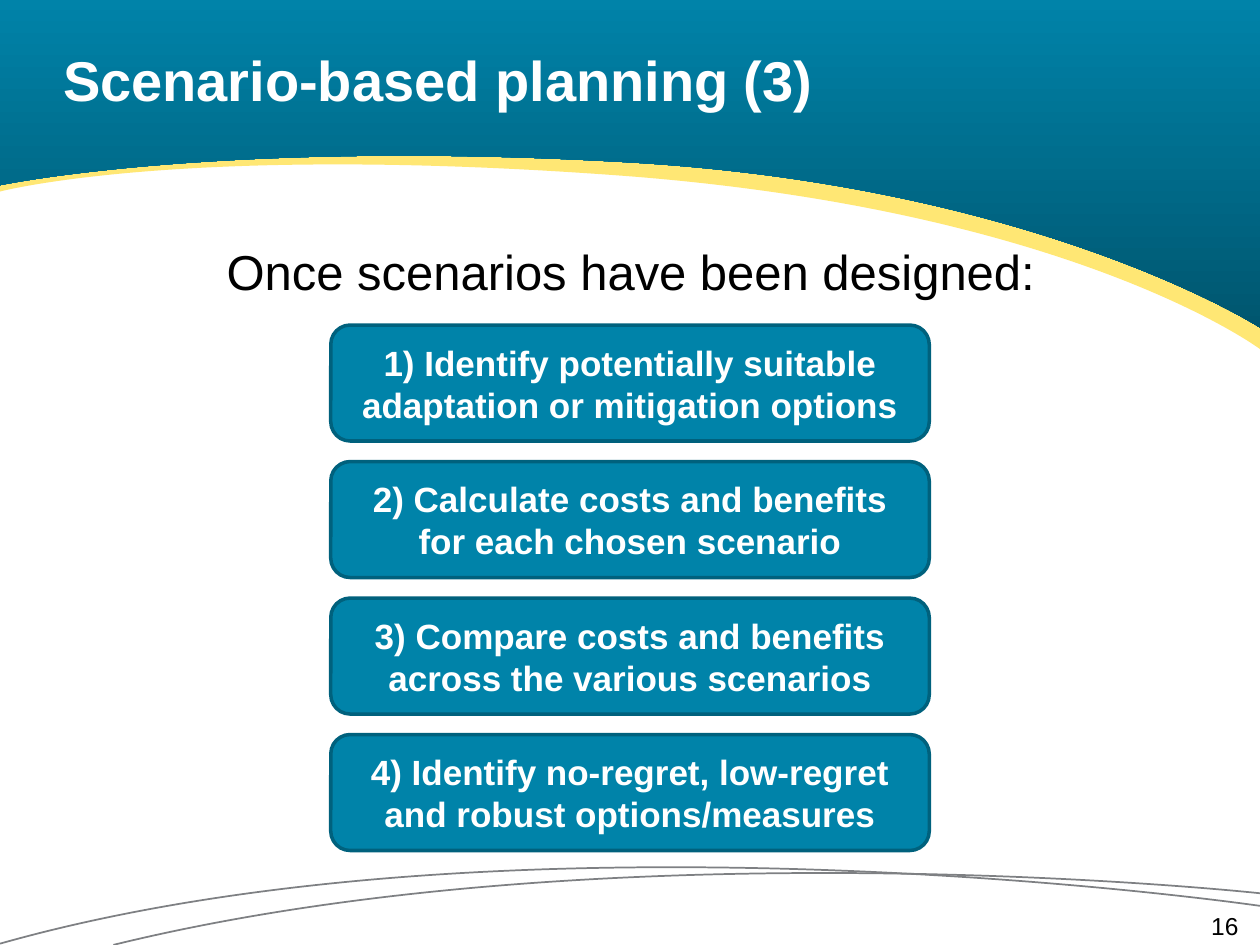
from pptx import Presentation, util as u
from pptx.dml.color import RGBColor
from pptx.enum import shapes as sh, text as tx
from pptx.oxml.ns import qn
from lxml import etree

# Content
TITLE = "Scenario-based planning (3)"
LEAD = "Once scenarios have been designed:"
STEPS = [
    "1) Identify potentially suitable adaptation or mitigation options",
    "2) Calculate costs and benefits for each chosen scenario",
    "3) Compare costs and benefits across the various scenarios",
    "4) Identify no-regret, low-regret and robust options/measures",
]
PAGE = "16"

# Curves: start point, then cubic segments (two controls and an end)
ARCS = [
    ((10, 7.09), [((10, 7.09), (4.85, 6.53), (0.9, 7.5))]),
    ((10, 7.19), [((10, 7.19), (4.1, 6.33), (0, 7.49))]),
]
GOLD = ((10, 2.77), [((10, 2.77), (8.54, 1.68), (5.01, 1.4)),
                     ((1.47, 1.13), (0, 1.52), (0, 1.52))])
TEAL = ((10, 2.6), [((10, 2.6), (8.26, 1.48), (5.01, 1.29)),
                    ((1.75, 1.1), (0, 1.47), (0, 1.47))])
TOP = [(0, -0.01), (10, -0.01)]

W, H = 10, 7.5
FONT = "Arial"
BOX_W, BOX_H, BOX_TOP = 0.475 * W, 0.92, 2.58
PITCH = (5.83 - BOX_TOP) / (len(STEPS) - 1)


def color(hexa):
    return RGBColor.from_string(hexa)


def place(shape, x, y, w, h):
    shape.left, shape.top, shape.width, shape.height = map(u.Inches, (x, y, w, h))


def write(shape, words, size, hue, bold=False, align=tx.PP_ALIGN.LEFT,
          anchor=tx.MSO_ANCHOR.TOP, inset=0):
    frame = shape.text_frame
    frame.word_wrap = True
    frame.auto_size = tx.MSO_AUTO_SIZE.NONE
    frame.vertical_anchor = anchor
    frame.margin_left = frame.margin_right = u.Inches(inset)
    frame.margin_top = frame.margin_bottom = u.Inches(inset / 2)
    para = frame.paragraphs[0]
    para.alignment = align
    run = para.add_run()
    run.text = words
    font = run.font
    font.name, font.size, font.bold = FONT, u.Pt(size), bold
    font.color.rgb = color(hue)
    return para


def draw(slide, start, segs, corners=()):
    """Open arc, or a closed band when corners are given."""
    pts = [start, *(p for seg in segs for p in seg), *corners]
    xs, ys = zip(*pts)
    x, y, right, low = min(xs), min(ys), max(xs), max(ys)

    # Outline of the bounding box, then its path turned into cubic curves
    frame = [(u.Inches(a), u.Inches(b))
             for a, b in ((x, y), (right, y), (right, low), (x, low))]
    pen = slide.shapes.build_freeform(*frame[0])
    pen.add_line_segments(frame[1:], close=bool(corners))
    shape = pen.convert_to_shape()
    path = next(shape.element.iter(qn("a:path")))
    for old in list(path):
        path.remove(old)
    moves = [("moveTo", [start])] + [("cubicBezTo", seg) for seg in segs]
    moves += [("lnTo", [p]) for p in corners]
    for tag, spots in moves:
        node = etree.SubElement(path, qn("a:" + tag))
        for a, b in spots:
            etree.SubElement(node, qn("a:pt"),
                             x=str(u.Inches(a - x)), y=str(u.Inches(b - y)))
    if corners:
        etree.SubElement(path, qn("a:close"))

    shape.shadow.inherit = False
    slide.shapes.title.element.addprevious(shape.element)
    return shape


def main():
    prs = Presentation()
    prs.slide_width, prs.slide_height = u.Inches(W), u.Inches(H)
    slide = prs.slides.add_slide(prs.slide_layouts[1])

    # Footer arcs
    for curve in ARCS:
        arc = draw(slide, *curve)
        arc.fill.background()
        arc.line.color.rgb = color("7E8083")
        arc.line.width = u.Pt(1)

    # Header bands
    gold = draw(slide, *GOLD, TOP)
    gold.fill.solid()
    gold.fill.fore_color.rgb = color("FFE774")
    gold.line.fill.background()
    teal = draw(slide, *TEAL, TOP)
    teal.fill.gradient()
    teal.fill.gradient_angle = 270
    for stop, pos, hue in zip(teal.fill.gradient_stops, (0, 1), ("0083A9", "00566F")):
        stop.position = pos
        stop.color.rgb = color(hue)
    teal.line.fill.background()

    # Title and lead line
    title, body = slide.shapes.title, slide.placeholders[1]
    place(title, 0.5, 0, 9.33, 1.25)
    write(title, TITLE, 32, "FFFFFF", True, anchor=tx.MSO_ANCHOR.MIDDLE)
    place(body, 0.34, 1.92, 9.33, 5.25)
    para = write(body, LEAD, 28, "000000", align=tx.PP_ALIGN.CENTER)
    props = para._p.get_or_add_pPr()
    props.set("marL", "0")
    props.set("indent", "0")
    etree.SubElement(props, qn("a:buNone"))

    # Page number
    page = slide.shapes.add_textbox(0, 0, 0, 0)
    place(page, 7.5, 7.23, 2.33, 0.18)
    write(page, PAGE, 14, "000000", align=tx.PP_ALIGN.RIGHT)

    # Step boxes
    for i, step in enumerate(STEPS):
        box = slide.shapes.add_shape(sh.MSO_SHAPE.ROUNDED_RECTANGLE, 0, 0, 0, 0)
        place(box, (W - BOX_W) / 2, BOX_TOP + i * PITCH, BOX_W, BOX_H)
        box.shadow.inherit = False
        box.fill.solid()
        box.fill.fore_color.rgb = color("0083A9")
        box.line.color.rgb = color("00617D")
        box.line.width = u.Pt(2)
        write(box, step, 20, "FFFFFF", True, tx.PP_ALIGN.CENTER,
              tx.MSO_ANCHOR.MIDDLE, 0.1)

    prs.save("out.pptx")


if __name__ == "__main__":
    main()
